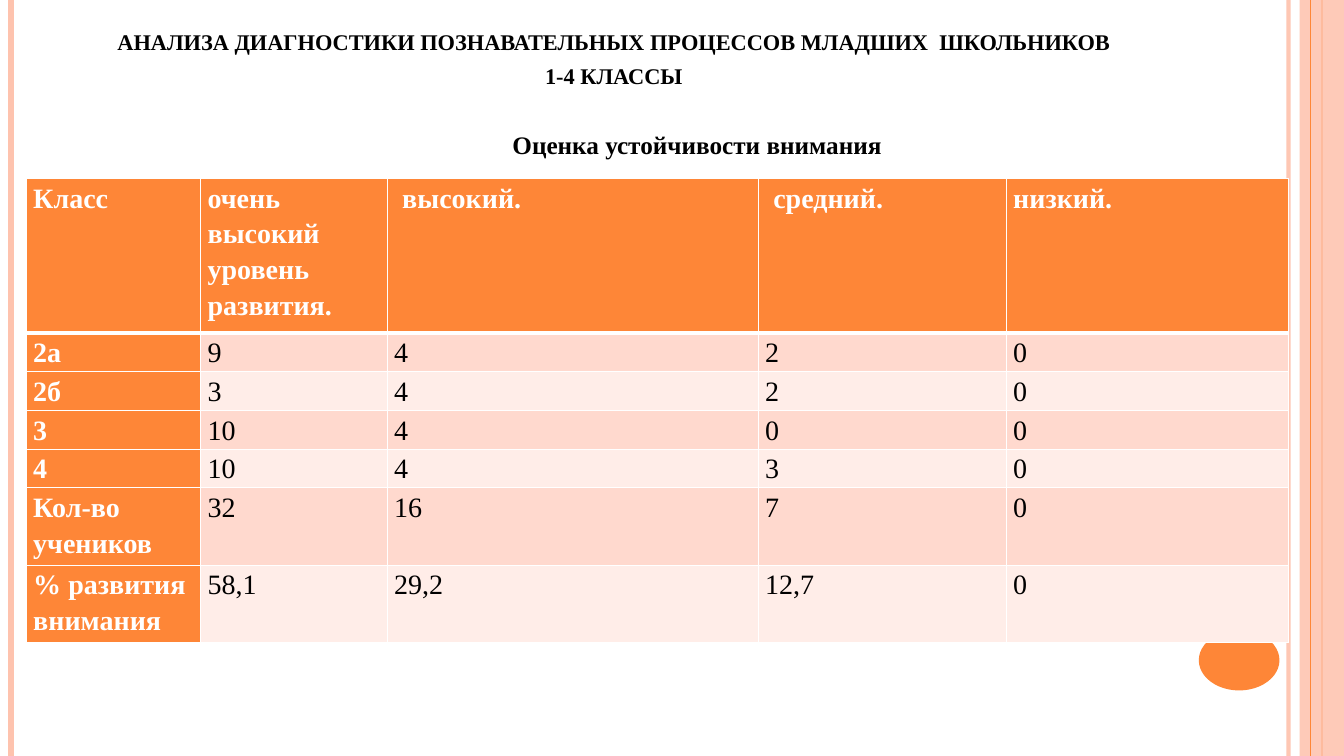
from dataclasses import dataclass

from lxml.etree import SubElement
from pptx import Presentation
from pptx.dml.color import RGBColor
from pptx.enum.shapes import MSO_CONNECTOR, MSO_SHAPE
from pptx.enum.text import MSO_ANCHOR, MSO_AUTO_SIZE, PP_ALIGN
from pptx.oxml.ns import qn
from pptx.util import Inches, Pt


@dataclass(frozen=True)
class Theme:
    font: str = "Times New Roman"
    orange: str = "FE8637"
    peach: str = "FEC3AE"
    bands: tuple = ("FFD9CE", "FFEDE8")
    white: str = "FFFFFF"
    black: str = "000000"
    title_size: int = 20
    subtitle_size: int = 18
    table_size: int = 20


THEME = Theme()
SLIDE_WIDTH, SLIDE_HEIGHT = 13.33, 7.5
FIRST_LINE_INDENT = Inches(0.08)
LINE_HEIGHT = 0.35

# x, colour, width in points, opacity in percent
OUTER_RULES = [
    (12.78, THEME.peach, 3, 93),
    (0.11, THEME.peach, 4.5, 100),
    (13.11, THEME.orange, 1.5, 100),
]
INNER_RULE = (13, THEME.orange, 0.75, 100)

TITLE_LINES = [
    "анализа диагностики познавательных процессов младших  школьников ",
    "1-4 классы ",
]
SUBTITLE = "Оценка устойчивости внимания "

COLUMN_WIDTHS = [1.73, 1.85, 3.68, 2.46, 2.8]
ROW_LINES = [4, 1, 1, 1, 1, 2, 2]
INDENTED_HEADINGS = ("высокий.", "средний.")
ATTENTION_LEVELS = [
    ["Класс", "очень высокий уровень развития.", "высокий.", "средний.", "низкий."],
    ["2а", "9", "4", "2", "0"],
    ["2б", "3", "4", "2", "0"],
    ["3", "10", "4", "0", "0"],
    ["4", "10", "4", "3", "0"],
    ["Кол-во учеников", "32", "16", "7", "0"],
    ["% развития внимания", "58,1", "29,2", "12,7", "0"],
]


def rgb(colour):
    return RGBColor.from_string(colour)


def set_opacity(fill, percent):
    """Add an alpha value to a solid fill of a shape or line."""
    if percent < 100:
        colour = fill._xPr.find(qn("a:solidFill"))[0]
        SubElement(colour, qn("a:alpha"), val=str(percent * 1000))


def add_rule(slide, x, colour, width, opacity):
    rule = slide.shapes.add_connector(
        MSO_CONNECTOR.STRAIGHT, Inches(x), 0, Inches(x), Inches(SLIDE_HEIGHT))
    rule.line.width = Pt(width)
    rule.line.color.rgb = rgb(colour)
    set_opacity(rule.line.fill, opacity)
    SubElement(rule._element.spPr, qn("a:effectLst"))


def add_plain_shape(slide, preset, box, colour, opacity=100):
    shape = slide.shapes.add_shape(preset, *map(Inches, box))
    shape.shadow.inherit = False
    shape.fill.solid()
    shape.fill.fore_color.rgb = rgb(colour)
    set_opacity(shape.fill, opacity)
    shape.line.fill.background()


def add_run(paragraph, text, size, colour, bold=True):
    run = paragraph.add_run()
    run.text = text
    font = run.font
    font.name, font.size, font.bold = THEME.font, Pt(size), bold
    font.color.rgb = rgb(colour)
    return run


def indent_first_line(paragraph):
    properties = paragraph._p.get_or_add_pPr()
    properties.set("marL", "0")
    properties.set("indent", str(FIRST_LINE_INDENT))


def add_heading(slide, box, anchor, wrap):
    """Return the text frame and centred first paragraph of a new text box."""
    frame = slide.shapes.add_textbox(*map(Inches, box)).text_frame
    frame.word_wrap = wrap
    frame.vertical_anchor = anchor
    paragraph = frame.paragraphs[0]
    paragraph.alignment = PP_ALIGN.CENTER
    return frame, paragraph


def add_title(slide):
    _, paragraph = add_heading(slide, (0.67, 0.11, 10.89, 0.83), MSO_ANCHOR.BOTTOM, True)
    for index, line in enumerate(TITLE_LINES):
        if index:
            paragraph.add_line_break()
        run = add_run(paragraph, line, THEME.title_size, THEME.black)
        run._r.get_or_add_rPr().set("cap", "small")


def add_subtitle(slide):
    frame, paragraph = add_heading(slide, (4.88, 1.23, 4.05, 0.4), MSO_ANCHOR.MIDDLE, False)
    frame.auto_size = MSO_AUTO_SIZE.SHAPE_TO_FIT_TEXT
    indent_first_line(paragraph)
    add_run(paragraph, SUBTITLE, THEME.subtitle_size, THEME.black)


def set_borders(cell, row):
    """Draw white cell edges, thicker between the heading and the body."""
    widths = {"L": 1, "R": 1, "T": 3 if row == 1 else 1, "B": 3 if row == 0 else 1}
    properties = cell._tc.get_or_add_tcPr()
    for side, width in widths.items():
        edge = SubElement(properties, qn(f"a:ln{side}"), w=str(Pt(width)))
        SubElement(SubElement(edge, qn("a:solidFill")), qn("a:srgbClr"), val=THEME.white)


def fill_cell(cell, text, row, column):
    is_heading = row == 0 or column == 0
    set_borders(cell, row)
    cell.fill.solid()
    cell.fill.fore_color.rgb = rgb(THEME.orange if is_heading else THEME.bands[(row - 1) % 2])
    cell.margin_left = cell.margin_right = Inches(0.07)
    cell.margin_top = cell.margin_bottom = 0
    paragraph = cell.text_frame.paragraphs[0]
    paragraph.line_spacing = 1.15
    if text in INDENTED_HEADINGS:
        paragraph.alignment = PP_ALIGN.JUSTIFY
        indent_first_line(paragraph)
    add_run(paragraph, text, THEME.table_size,
            THEME.white if is_heading else THEME.black, is_heading)


def add_attention_table(slide):
    table = slide.shapes.add_table(
        len(ATTENTION_LEVELS), len(COLUMN_WIDTHS), Inches(0.26), Inches(1.77),
        Inches(sum(COLUMN_WIDTHS)), Inches(sum(ROW_LINES) * LINE_HEIGHT)).table
    table.first_col = True
    for column, width in zip(table.columns, COLUMN_WIDTHS):
        column.width = Inches(width)
    for row, lines in zip(table.rows, ROW_LINES):
        row.height = Inches(lines * LINE_HEIGHT)
    for row, values in enumerate(ATTENTION_LEVELS):
        for column, text in enumerate(values):
            fill_cell(table.cell(row, column), text, row, column)


def add_side_decoration(slide):
    for rule in OUTER_RULES:
        add_rule(slide, *rule)
    add_plain_shape(slide, MSO_SHAPE.RECTANGLE, (12.89, 0, 0.44, SLIDE_HEIGHT), THEME.peach, 87)
    add_rule(slide, *INNER_RULE)
    add_plain_shape(slide, MSO_SHAPE.OVAL, (11.89, 6.25, 0.8, 0.6), THEME.orange)


def main():
    presentation = Presentation()
    presentation.slide_width = Inches(SLIDE_WIDTH)
    presentation.slide_height = Inches(SLIDE_HEIGHT)
    slide = presentation.slides.add_slide(presentation.slide_layouts[6])
    add_side_decoration(slide)
    add_title(slide)
    add_attention_table(slide)
    add_subtitle(slide)
    presentation.save("out.pptx")


if __name__ == "__main__":
    main()
